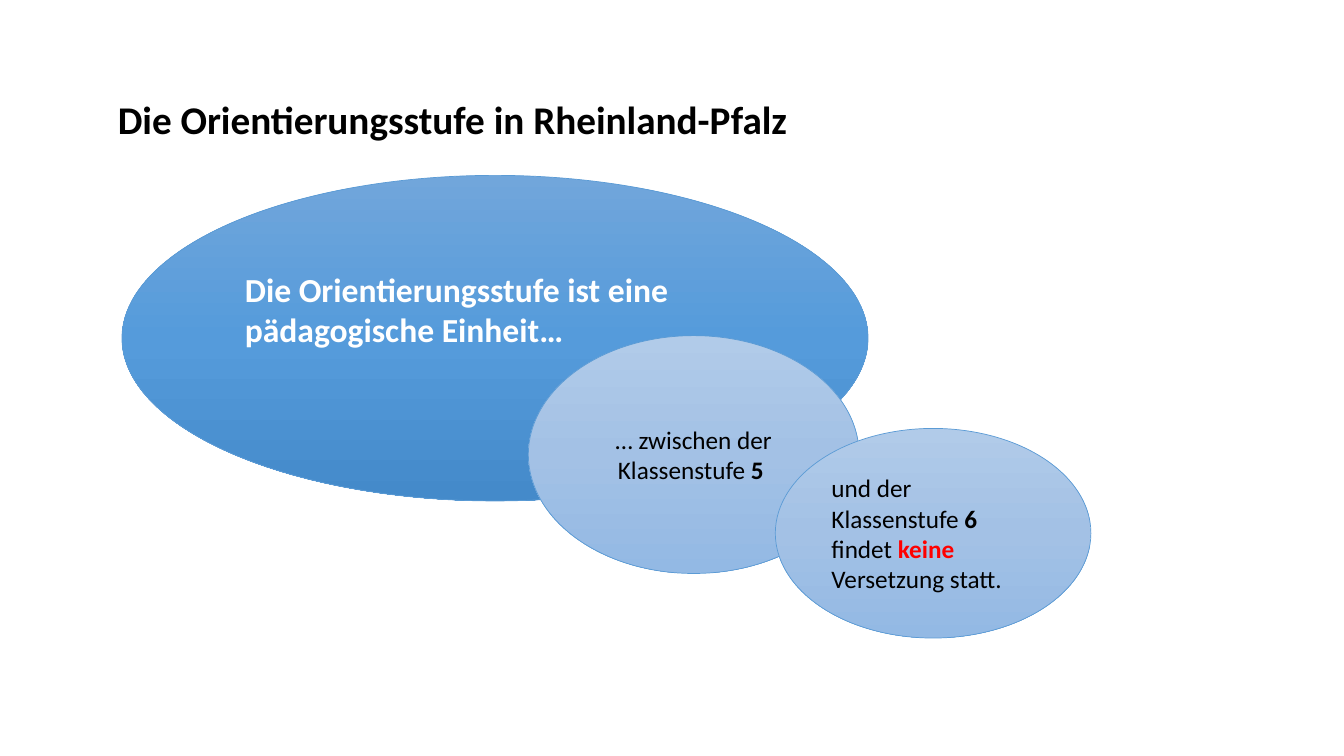
from copy import deepcopy
from dataclasses import dataclass

from pptx import Presentation
from pptx.dml.color import RGBColor
from pptx.enum import shapes, text
from pptx.util import Inches, Pt


@dataclass(frozen=True)
class Theme:
    """Hold the colours, font and type sizes of the slide."""

    font: str = "Calibri"
    ink: str = "000000"
    light: str = "FFFFFF"
    accent: str = "FF0000"
    outline: str = "5B9BD5"
    strong: tuple[str, ...] = ("71A6DB", "559BDB", "448ACA")
    pale: tuple[str, ...] = ("B1CBE9", "A3C1E5", "93B9E4")
    title_size: int = 28
    lead_size: int = 24
    body_size: int = 18


THEME = Theme()


@dataclass(frozen=True)
class Span:
    """Describe a stretch of evenly formatted text."""

    words: str
    bold: bool = False
    color: str = THEME.ink


@dataclass(frozen=True)
class Bubble:
    """Describe an ellipse with a gradient and its text."""

    area: tuple[float, float, float, float]
    gradient: tuple[str, ...]
    spans: tuple[Span, ...] = ()
    align: text.PP_ALIGN = text.PP_ALIGN.LEFT


@dataclass(frozen=True)
class Label:
    """Describe a text box with one span per paragraph."""

    area: tuple[float, float, float, float]
    size: int
    lines: tuple[Span, ...]


BUBBLES = (
    Bubble((1.21, 1.74, 7.4, 3.23), THEME.strong),
    Bubble(
        (5.24, 3.33, 3.28, 2.36),
        THEME.pale,
        (Span("… zwischen der Klassenstufe "), Span("5 ", bold=True)),
        text.PP_ALIGN.CENTER,
    ),
    Bubble(
        (7.69, 4.25, 3.13, 2.08),
        THEME.pale,
        (
            Span("und der Klassenstufe "),
            Span("6", bold=True),
            Span(" findet "),
            Span("keine", bold=True, color=THEME.accent),
            Span(" Versetzung statt."),
        ),
    ),
)
LABELS = (
    Label(
        (1.07, 0.9, 9.37, 0.57),
        THEME.title_size,
        (Span("Die Orientierungsstufe in Rheinland-Pfalz", bold=True),),
    ),
    Label(
        (2.33, 2.62, 5.61, 0.91),
        THEME.lead_size,
        (
            Span("Die Orientierungsstufe ist eine", True, THEME.light),
            Span("pädagogische Einheit…", True, THEME.light),
        ),
    ),
)


def add_span(para, span: Span, size: int) -> None:
    """Append a formatted run to a paragraph."""
    run = para.add_run()
    run.text = span.words
    run.font.name = THEME.font
    run.font.size = Pt(size)
    run.font.bold = span.bold
    run.font.color.rgb = RGBColor.from_string(span.color)


def paint_gradient(shape, colors: tuple[str, ...]) -> None:
    """Fill a shape from top to bottom with evenly spaced colours."""
    shape.fill.gradient()
    shape.fill.gradient_angle = 270
    stop_list = shape.element.xpath(".//a:gsLst")[0]
    while len(stop_list) < len(colors):
        stop_list.append(deepcopy(stop_list[0]))
    for index, (stop, color) in enumerate(zip(shape.fill.gradient_stops, colors)):
        stop.position = index / (len(colors) - 1)
        stop.color.rgb = RGBColor.from_string(color)


def add_bubble(page, bubble: Bubble) -> None:
    """Draw an ellipse with its text."""
    shape = page.shapes.add_shape(
        shapes.MSO_SHAPE.OVAL, *(Inches(value) for value in bubble.area)
    )
    shape.shadow.inherit = False
    paint_gradient(shape, bubble.gradient)
    shape.line.color.rgb = RGBColor.from_string(THEME.outline)
    shape.line.width = Pt(0.5)
    shape.text_frame.vertical_anchor = text.MSO_ANCHOR.MIDDLE
    para = shape.text_frame.paragraphs[0]
    para.alignment = bubble.align
    for span in bubble.spans:
        add_span(para, span, THEME.body_size)


def add_label(page, label: Label) -> None:
    """Draw a text box with its paragraphs."""
    box = page.shapes.add_textbox(*(Inches(value) for value in label.area))
    frame = box.text_frame
    frame.word_wrap = True
    frame.auto_size = text.MSO_AUTO_SIZE.SHAPE_TO_FIT_TEXT
    for index, line in enumerate(label.lines):
        para = frame.add_paragraph() if index else frame.paragraphs[0]
        add_span(para, line, label.size)


def main() -> None:
    """Build the slide and save the deck."""
    deck = Presentation()
    deck.slide_width, deck.slide_height = Inches(13.33), Inches(7.5)
    page = deck.slides.add_slide(deck.slide_layouts[6])
    for bubble in BUBBLES:
        add_bubble(page, bubble)
    for label in LABELS:
        add_label(page, label)
    deck.save("out.pptx")


if __name__ == "__main__":
    main()
